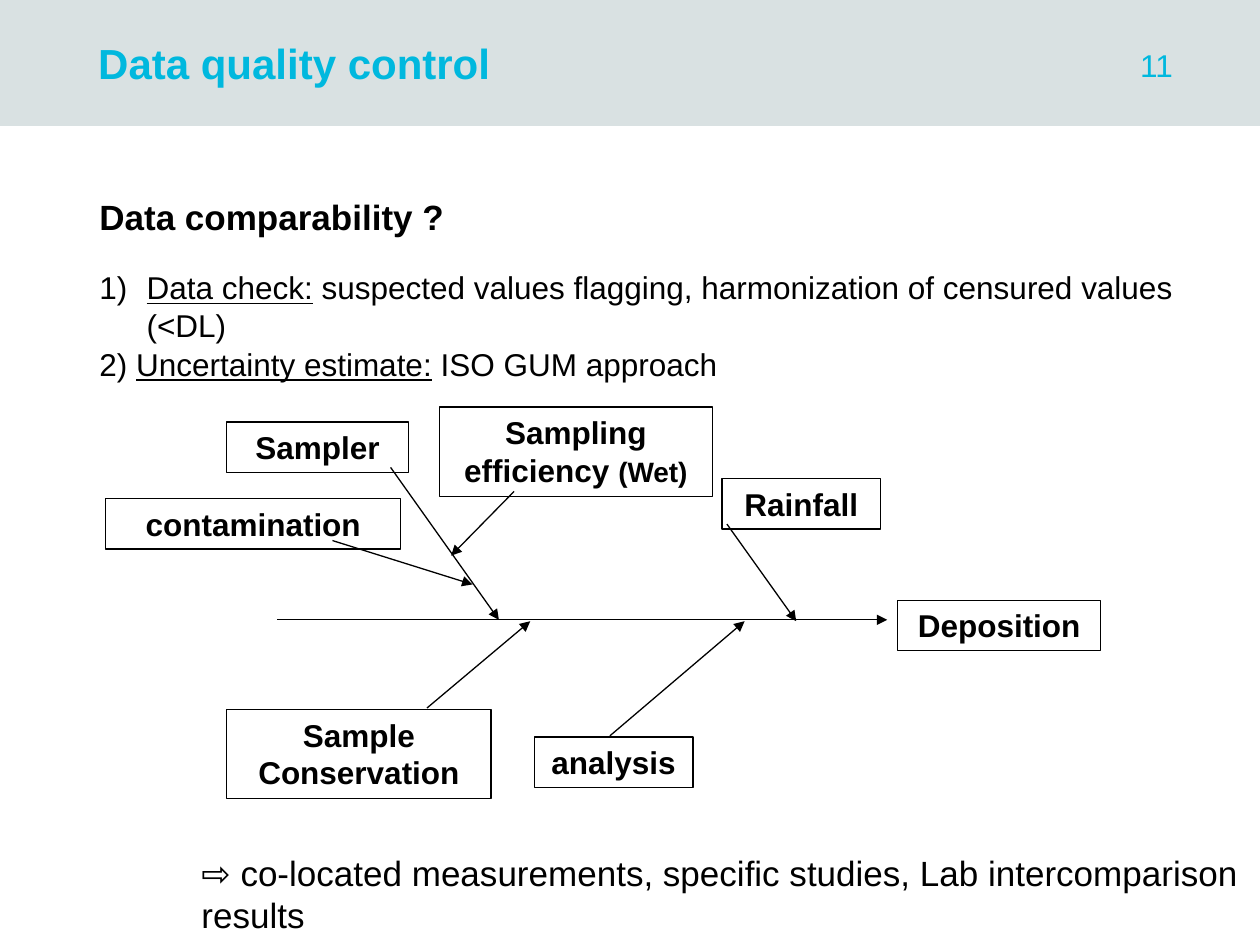
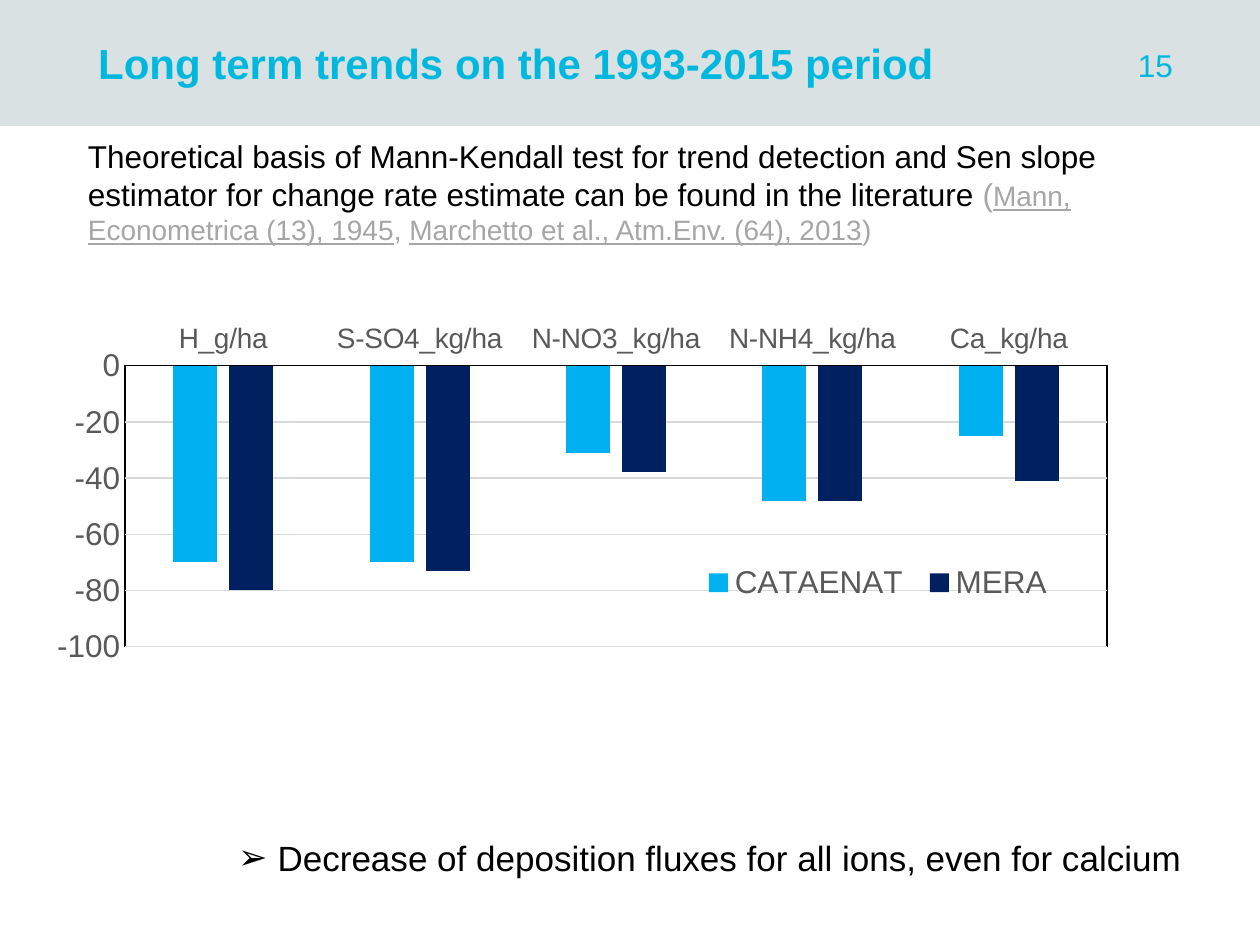
from lxml import etree
from pptx import Presentation
from pptx import util as u
from pptx.chart import data as chart_data
from pptx.dml import color
from pptx.enum import chart as charts, shapes, text
from pptx.oxml import ns

FONT = "Arial"
BLACK, CYAN, BAND = "000000", "00B8DE", "D9E1E2"
CITATION, LABEL, GRID = "A6A6A6", "595959", "D9D9D9"
LINE_WIDTH = 0.75


def rgb(hex_code):
    return color.RGBColor.from_string(hex_code)


def add_child(parent, tag, **attributes):
    child = etree.SubElement(parent, ns.qn(tag))
    for name, value in attributes.items():
        child.set(name, str(value))
    return child


def style_font(font, size, hex_code, bold=None):
    font.name = FONT
    font.size = u.Pt(size)
    font.color.rgb = rgb(hex_code)
    font.bold = bold


def style_line(line, hex_code):
    line.color.rgb = rgb(hex_code)
    line.width = u.Pt(LINE_WIDTH)


def fill_text(frame, runs, size, hex_code=BLACK, bold=None,
              align=text.PP_ALIGN.LEFT, bullet=None, indent=0):
    frame.word_wrap = True
    frame.vertical_anchor = text.MSO_ANCHOR.TOP
    paragraph = frame.paragraphs[0]
    paragraph.alignment = align
    if bullet:
        properties = paragraph._p.get_or_add_pPr()
        properties.set("marL", str(u.Pt(indent)))
        properties.set("indent", str(-u.Pt(indent)))
        tag, attributes = bullet
        add_child(properties, "a:buFont", typeface=FONT)
        add_child(properties, tag, **attributes)
    style_font(paragraph.font, size, hex_code, bold)
    for words, changes in runs:
        run = paragraph.add_run()
        run.text = words
        if "size" in changes:
            run.font.size = u.Pt(changes["size"])
        if "color" in changes:
            run.font.color.rgb = rgb(changes["color"])
        if "underline" in changes:
            run.font.underline = changes["underline"]


def add_text(slide, place, runs, size, **style):
    box = slide.shapes.add_textbox(*map(u.Pt, place))
    fill_text(box.text_frame, runs, size, **style)
    return box.text_frame


def add_rectangle(slide, place):
    rectangle = slide.shapes.add_shape(
        shapes.MSO_SHAPE.RECTANGLE, *map(u.Pt, place))
    rectangle.shadow.inherit = False
    return rectangle


def add_factor(slide, place, runs):
    factor = add_rectangle(slide, place)
    factor.fill.background()
    style_line(factor.line, BLACK)
    fill_text(factor.text_frame, runs, 18, bold=True,
              align=text.PP_ALIGN.CENTER)


def add_arrow(slide, start, end):
    arrow = slide.shapes.add_connector(
        shapes.MSO_CONNECTOR.STRAIGHT, *map(u.Pt, start + end))
    style_line(arrow.line, BLACK)
    add_child(arrow.line._get_or_add_ln(), "a:tailEnd", type="triangle")
    add_child(arrow._element.spPr, "a:effectLst")


def start_slide(deck, title, number):
    slide = deck.slides.add_slide(deck.slide_layouts[6])
    band = add_rectangle(slide, (0, 0, 720, 72))
    band.fill.solid()
    band.fill.fore_color.rgb = rgb(BAND)
    band.line.fill.background()
    add_text(slide, (49, 18, 553, 54), [(title, {})], 24,
             hex_code=CYAN, bold=True)
    page = add_text(slide, (619, 21, 51.2, 31.6), [(number, {})], 18,
                    hex_code=CYAN, align=text.PP_ALIGN.RIGHT)
    page.margin_left = page.margin_right = 0
    page.margin_top = page.margin_bottom = 0
    page.vertical_anchor = text.MSO_ANCHOR.MIDDLE
    return slide


def add_cause_diagram(slide):
    factors = [
        ((129.6, 241.2, 103.7, 28.8), [("Sampler", {})]),
        ((60.5, 285, 168.5, 28.8), [("contamination", {})]),
        ((251.2, 232.6, 155.8, 51),
         [("Sampling efficiency ", {}), ("(Wet)", {"size": 16})]),
        ((129.6, 405.4, 151, 51), [("Sample Conservation", {})]),
        ((305.3, 421.2, 90.7, 28.8), [("analysis", {})]),
        ((412.6, 273.6, 90.7, 28.8), [("Rainfall", {})]),
        ((513, 343, 116, 28.8), [("Deposition", {})]),
    ]
    for place, runs in factors:
        add_factor(slide, place, runs)

    arrows = [
        ((158.4, 354.2), (507, 354.2)),
        ((223.2, 267.1), (285.1, 354.2)),
        ((244, 404.6), (303, 355)),
        ((348.5, 420.5), (425.5, 355)),
        ((293.8, 280.8), (257.8, 317.5)),
        ((415.4, 299.5), (455, 355)),
        ((190, 308.9), (270, 334)),
    ]
    for start, end in arrows:
        add_arrow(slide, start, end)


def make_layout(x, y, w, h, inner=False):
    layout = etree.Element(ns.qn("c:layout"))
    manual = add_child(layout, "c:manualLayout")
    if inner:
        add_child(manual, "c:layoutTarget", val="inner")
    add_child(manual, "c:xMode", val="edge")
    add_child(manual, "c:yMode", val="edge")
    for tag, value in (("c:x", x), ("c:y", y), ("c:w", w), ("c:h", h)):
        add_child(manual, tag, val=value)
    return layout


def place_part(part, position, layout):
    for automatic in part.findall(ns.qn("c:layout")):
        part.remove(automatic)
    part.insert(position, layout)


def frame_plot(plot_area):
    outline = add_child(add_child(plot_area, "c:spPr"), "a:ln",
                        w=u.Pt(LINE_WIDTH))
    add_child(add_child(outline, "a:solidFill"), "a:srgbClr", val=BLACK)


def add_trend_chart(slide):
    trends = chart_data.CategoryChartData()
    trends.categories = ["H_g/ha", "S-SO4_kg/ha", "N-NO3_kg/ha",
                         "N-NH4_kg/ha", "Ca_kg/ha"]
    trends.add_series("CATAENAT", (-70, -70, -31, -48, -25))
    trends.add_series("MERA", (-80, -73, -38, -48, -41))
    chart = slide.shapes.add_chart(
        charts.XL_CHART_TYPE.COLUMN_CLUSTERED,
        *map(u.Pt, (21.6, 147.6, 623.5, 236.2)), trends).chart
    chart.has_title = False
    style_font(chart.font, 18, BLACK)

    bars = chart.plots[0]
    bars.vary_by_categories = False
    bars.gap_width = 219
    bars.overlap = -27
    for network, hex_code in zip(bars.series, ("00B0F0", "002060")):
        network.invert_if_negative = False
        network.format.fill.solid()
        network.format.fill.fore_color.rgb = rgb(hex_code)

    ions, change = chart.category_axis, chart.value_axis
    for axis, size in ((ions, 16), (change, 18)):
        axis.major_tick_mark = charts.XL_TICK_MARK.NONE
        axis.minor_tick_mark = charts.XL_TICK_MARK.NONE
        style_font(axis.tick_labels.font, size, LABEL)
    ions.tick_label_position = charts.XL_TICK_LABEL_POSITION.HIGH
    style_line(ions.format.line, BLACK)
    change.format.line.fill.background()
    change.minimum_scale, change.maximum_scale = -100, 0
    change.major_unit = 20
    change.has_major_gridlines = True
    style_line(change.major_gridlines.format.line, GRID)

    chart.has_legend = True
    legend = chart.legend
    legend.position = charts.XL_LEGEND_POSITION.TOP
    legend.include_in_layout = False
    style_font(legend.font, 18, LABEL)
    place_part(legend._element, 1, make_layout(0.6, 0.72, 0.34, 0.13))

    plot_area = chart._chartSpace.chart.plotArea
    place_part(plot_area, 0, make_layout(0.08, 0.26, 0.9, 0.68, inner=True))
    frame_plot(plot_area)


def build_quality_slide(deck):
    slide = start_slide(deck, "Data quality control", "11")
    add_text(slide, (49.7, 108, 353, 31), [("Data comparability ?", {})], 20,
             bold=True)
    underlined = {"underline": True}
    add_text(slide, (49.7, 149.8, 670.3, 51),
             [("Data check:", underlined),
              (" suspected values flagging, harmonization of censured"
               " values (<DL)", {})], 18,
             bullet=("a:buAutoNum", {"type": "arabicParenR"}), indent=27)
    add_text(slide, (49.7, 193.7, 656, 28.8),
             [("2) ", {}), ("Uncertainty estimate:", underlined),
              (" ISO GUM approach", {})], 18)
    add_cause_diagram(slide)
    add_text(slide, (108, 483.1, 609.2, 55.4),
             [("⇨ co-located measurements, specific studies, "
               "Lab intercomparison results", {})], 20)


def build_trend_slide(deck):
    slide = start_slide(deck, "Long term trends on the 1993-2015 period", "15")
    aside = {"color": CITATION, "size": 16}
    reference = {**aside, "underline": True}
    add_text(slide, (43.2, 74.9, 650.2, 72.7),
             [("Theoretical basis of Mann-Kendall test for trend detection "
               "and Sen slope estimator for change rate estimate can be "
               "found in the literature ", {}),
              ("(", {"color": CITATION}),
              ("Mann, Econometrica (13), 1945", reference),
              (", ", aside),
              ("Marchetto et al., Atm.Env. (64), 2013", reference),
              (")", aside)], 18)
    add_trend_chart(slide)
    add_text(slide, (129, 474.5, 591, 31.7),
             [("Decrease of deposition fluxes for all ions, "
               "even for calcium", {})], 20,
             bullet=("a:buChar", {"char": "➢"}), indent=22.5)


def main():
    deck = Presentation()
    deck.slide_width, deck.slide_height = u.Pt(720), u.Pt(540)
    build_quality_slide(deck)
    build_trend_slide(deck)
    deck.save("out.pptx")


if __name__ == "__main__":
    main()
